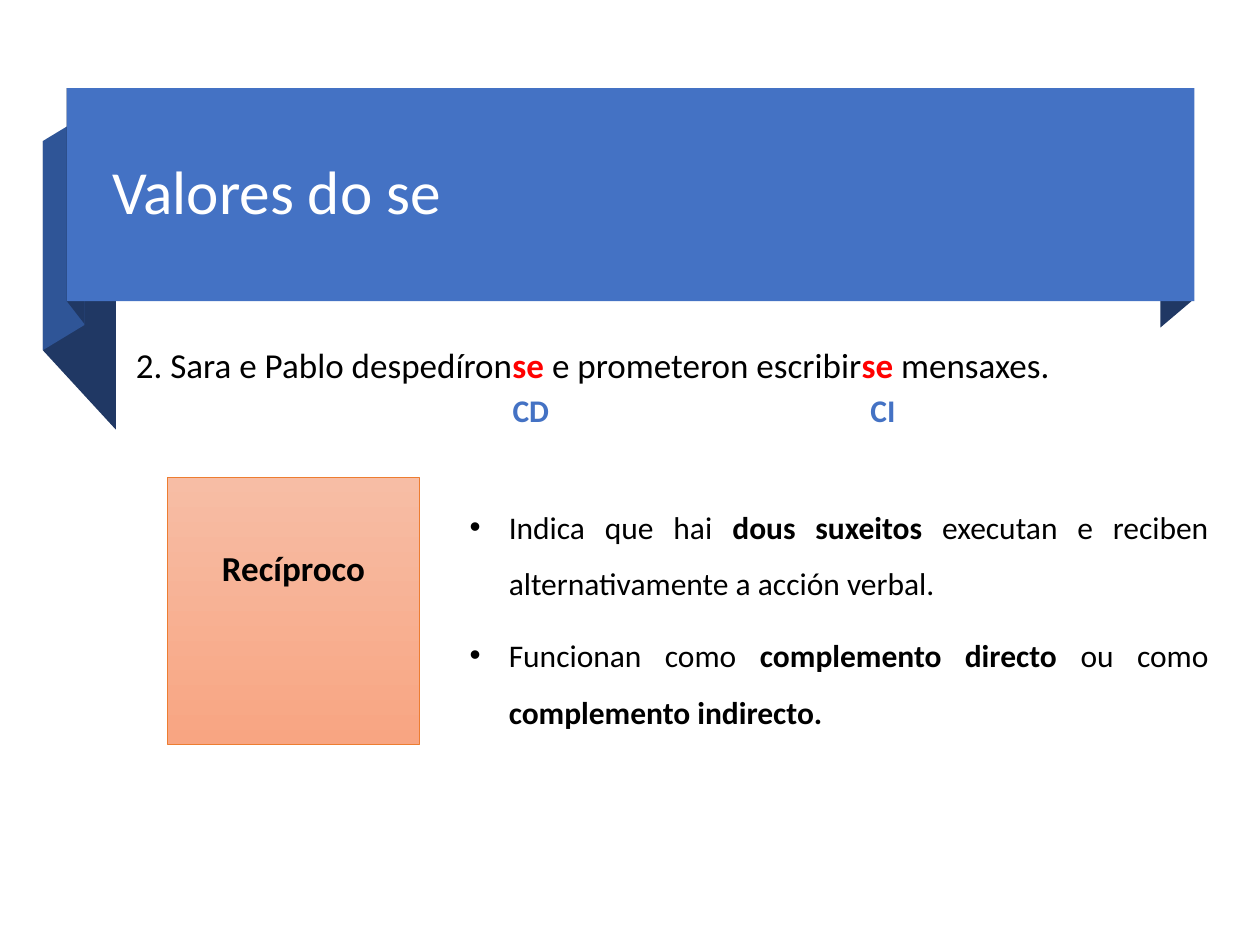
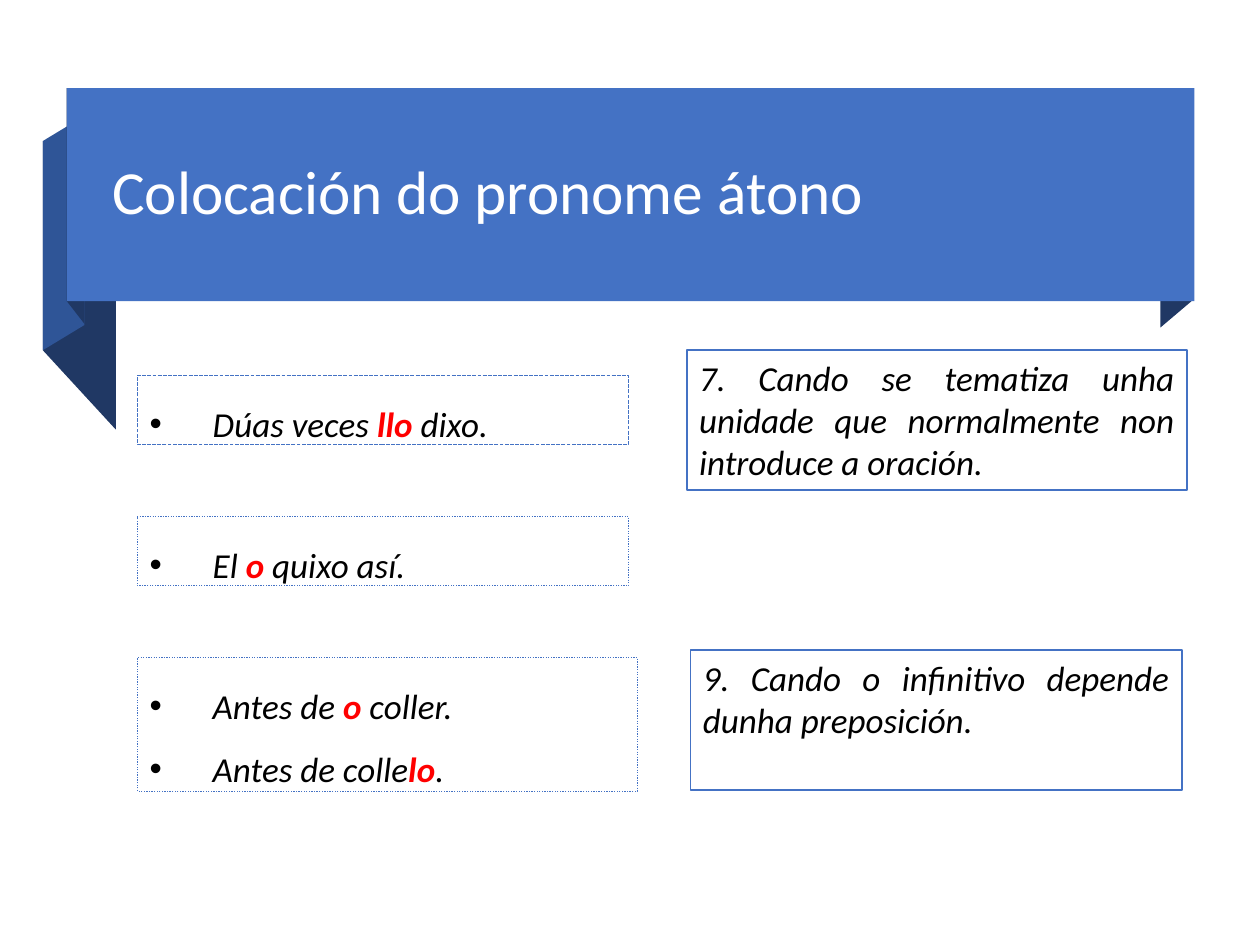
from dataclasses import dataclass
from typing import Optional

from lxml import etree
from pptx import Presentation
from pptx.dml.color import RGBColor
from pptx.enum.dml import MSO_LINE
from pptx.enum.shapes import MSO_SHAPE
from pptx.enum.text import MSO_ANCHOR, PP_ALIGN
from pptx.oxml.ns import qn
from pptx.util import Inches, Pt

RECT = MSO_SHAPE.RECTANGLE
MIDDLE, TOP = MSO_ANCHOR.MIDDLE, MSO_ANCHOR.TOP
JUSTIFY, CENTER, LEFT = PP_ALIGN.JUSTIFY, PP_ALIGN.CENTER, PP_ALIGN.LEFT
DASHED, DOTTED = MSO_LINE.SQUARE_DOT, MSO_LINE.ROUND_DOT
TITLE_ONLY = 5


@dataclass(frozen=True)
class Theme:
    font: str = "Calibri"
    blue: str = "4472C4"
    mid_blue: str = "2F5597"
    navy: str = "203864"
    red: str = "FF0000"
    orange: str = "ED7D31"
    peach: tuple[str, str] = ("F7BDA5", "F8A582")
    black: str = "000000"
    white: str = "FFFFFF"
    title: int = 35
    body: int = 20
    small: int = 18


THEME = Theme()


@dataclass(frozen=True)
class Fold:
    points: tuple[tuple[float, float], ...]
    color: str


@dataclass(frozen=True)
class Box:
    """A block of text; the parts between asterisks are set in bold."""
    at: tuple[float, float, float, float]
    paragraphs: tuple[str, ...]
    size: int = THEME.body
    color: str = THEME.black
    strong: str = THEME.red
    italic: bool = False
    align: PP_ALIGN = JUSTIFY
    spacing: float = 1.5
    indent: float = 0
    inset_top: float = 0.05
    fill: Optional[str] = None
    gradient: Optional[tuple[str, str]] = None
    line: Optional[str] = None
    line_width: float = 0.75
    dash: Optional[MSO_LINE] = None


BAND = (0.53, 0.7, 8.95, 1.69)
TITLE_AT = (0.79, 0.88, 8.42, 1.33)
FOLDS = (
    Fold(((0.92, 3.41), (0.34, 2.78), (0.34, 1.12), (0.92, 1.75)), THEME.navy),
    Fold(((0.67, 2.58), (0.34, 2.78), (0.34, 1.12), (0.67, 0.92)), THEME.mid_blue),
    Fold(((0.67, 2.57), (0.53, 2.39), (0.53, 0.7), (0.67, 0.89)), THEME.navy),
    Fold(((9.47, 2.38), (9.21, 2.6), (9.21, 0.91), (9.47, 0.7)), THEME.navy),
)


def function_label(left: float, text: str) -> Box:
    return Box((left, 2.9, 0.5, 0.51), (f"*{text}*",), THEME.small, strong=THEME.blue)


def explanation(top: float, text: str) -> Box:
    return Box((3.63, top, 6.06, 0.96), (text,), THEME.small, strong=THEME.black, indent=0.31)


def example(top: float, width: float, height: float, dash: MSO_LINE, *paragraphs: str) -> Box:
    return Box((1.09, top, width, height), paragraphs, italic=True, indent=0.5,
               line=THEME.blue, dash=dash)


def rule(left: float, top: float, width: float, text: str) -> Box:
    return Box((left, top, width, 1.11), (text,), italic=True, spacing=1,
               fill=THEME.white, line=THEME.blue, line_width=1)


SLIDES = {
    "Valores do se": (
        Box((0.98, 2.51, 8.2, 0.55),
            ("2. Sara e Pablo despedíron*se *e prometeron escribir*se* mensaxes.",)),
        explanation(3.83, "Indica que hai *dous suxeitos* executan e reciben "
                          "alternativamente a acción verbal."),
        explanation(4.85, "Funcionan como *complemento directo *ou como "
                          "*complemento indirecto.*"),
        function_label(3.97, "CD"),
        function_label(6.81, "CI"),
        Box((1.33, 3.79, 2, 2.12), ("*Recíproco*",), strong=THEME.black, align=CENTER,
            inset_top=0.38, gradient=THEME.peach, line=THEME.orange, line_width=0.5),
    ),
    "Colocación do pronome átono": (
        example(2.98, 3.9, 0.55, DASHED, "Dúas veces *llo *dixo."),
        rule(5.45, 2.78, 3.97,
             "7. Cando se tematiza unha unidade que normalmente non introduce a oración."),
        example(4.1, 3.9, 0.55, DOTTED, "El *o *quixo así."),
        rule(5.48, 5.16, 3.9, "9. Cando o infinitivo depende dunha preposición."),
        example(5.22, 3.97, 1.06, DOTTED, "Antes de *o* coller.", "Antes de colle*lo*."),
    ),
}


def rgb(color: str) -> RGBColor:
    return RGBColor.from_string(color)


def inches(values) -> list[Inches]:
    return [Inches(v) for v in values]


def apply(target, formats: dict) -> None:
    for name, value in formats.items():
        setattr(target, name, value)


def paint(sp, color: str) -> None:
    """Fill a shape with one colour, with no line or shadow."""
    sp.shadow.inherit = False
    sp.fill.solid()
    sp.fill.fore_color.rgb = rgb(color)
    sp.line.fill.background()


def add_run(p, text: str, size: int, color: str, bold: bool = False, italic: bool = False) -> None:
    r = p.add_run()
    r.text = text
    apply(r.font, {"name": THEME.font, "size": Pt(size), "bold": bold, "italic": italic})
    r.font.color.rgb = rgb(color)


def add_bullet(p, indent: float) -> None:
    pPr = p._p.get_or_add_pPr()
    pPr.set("marL", str(Inches(indent)))
    pPr.set("indent", str(-Inches(indent)))
    etree.SubElement(pPr, qn("a:buFont")).set("typeface", "Arial")
    etree.SubElement(pPr, qn("a:buChar")).set("char", "•")


def add_ribbon(s) -> None:
    for fold in FOLDS:
        start, *rest = [inches(point) for point in fold.points]
        builder = s.shapes.build_freeform(*start)
        builder.add_line_segments(rest, close=True)
        paint(builder.convert_to_shape(), fold.color)
    paint(s.shapes.add_shape(RECT, *inches(BAND)), THEME.blue)


def add_title(s, text: str) -> None:
    sp = s.shapes.title
    sp._element.getparent().append(sp._element)  # in front of the ribbon
    apply(sp, dict(zip(("left", "top", "width", "height"), inches(TITLE_AT))))
    tf = sp.text_frame
    apply(tf, {"vertical_anchor": MIDDLE, "word_wrap": True})
    p = tf.paragraphs[0]
    apply(p, {"alignment": LEFT, "line_spacing": 0.9})
    add_run(p, text, THEME.title, THEME.white)


def add_frame(s, box: Box):
    """Add the outlined shape that holds the text of a box."""
    sp = s.shapes.add_shape(RECT, *inches(box.at))
    paint(sp, box.fill or THEME.white)
    if box.gradient:
        sp.fill.gradient()
        sp.fill.gradient_angle = 270
        for stop, color in zip(sp.fill.gradient_stops, box.gradient):
            stop.color.rgb = rgb(color)
    elif not box.fill:
        sp.fill.background()
    sp.line.color.rgb = rgb(box.line)
    sp.line.width = Pt(box.line_width)
    if box.dash:
        sp.line.dash_style = box.dash
    return sp


def add_box(s, box: Box) -> None:
    sp = add_frame(s, box) if box.line else s.shapes.add_textbox(*inches(box.at))
    tf = sp.text_frame
    apply(tf, {"word_wrap": True, "vertical_anchor": TOP, "margin_top": Inches(box.inset_top)})
    for i, text in enumerate(box.paragraphs):
        p = tf.add_paragraph() if i else tf.paragraphs[0]
        apply(p, {"alignment": box.align, "line_spacing": box.spacing})
        if box.indent:
            add_bullet(p, box.indent)
        for n, part in enumerate(text.split("*")):
            bold = n % 2 == 1
            if part:
                add_run(p, part, box.size, box.strong if bold else box.color, bold, box.italic)


def main() -> None:
    prs = Presentation()
    apply(prs, {"slide_width": Inches(10), "slide_height": Inches(7.5)})
    for title, boxes in SLIDES.items():
        s = prs.slides.add_slide(prs.slide_layouts[TITLE_ONLY])
        add_ribbon(s)
        add_title(s, title)
        for box in boxes:
            add_box(s, box)
    prs.save("out.pptx")


if __name__ == "__main__":
    main()
